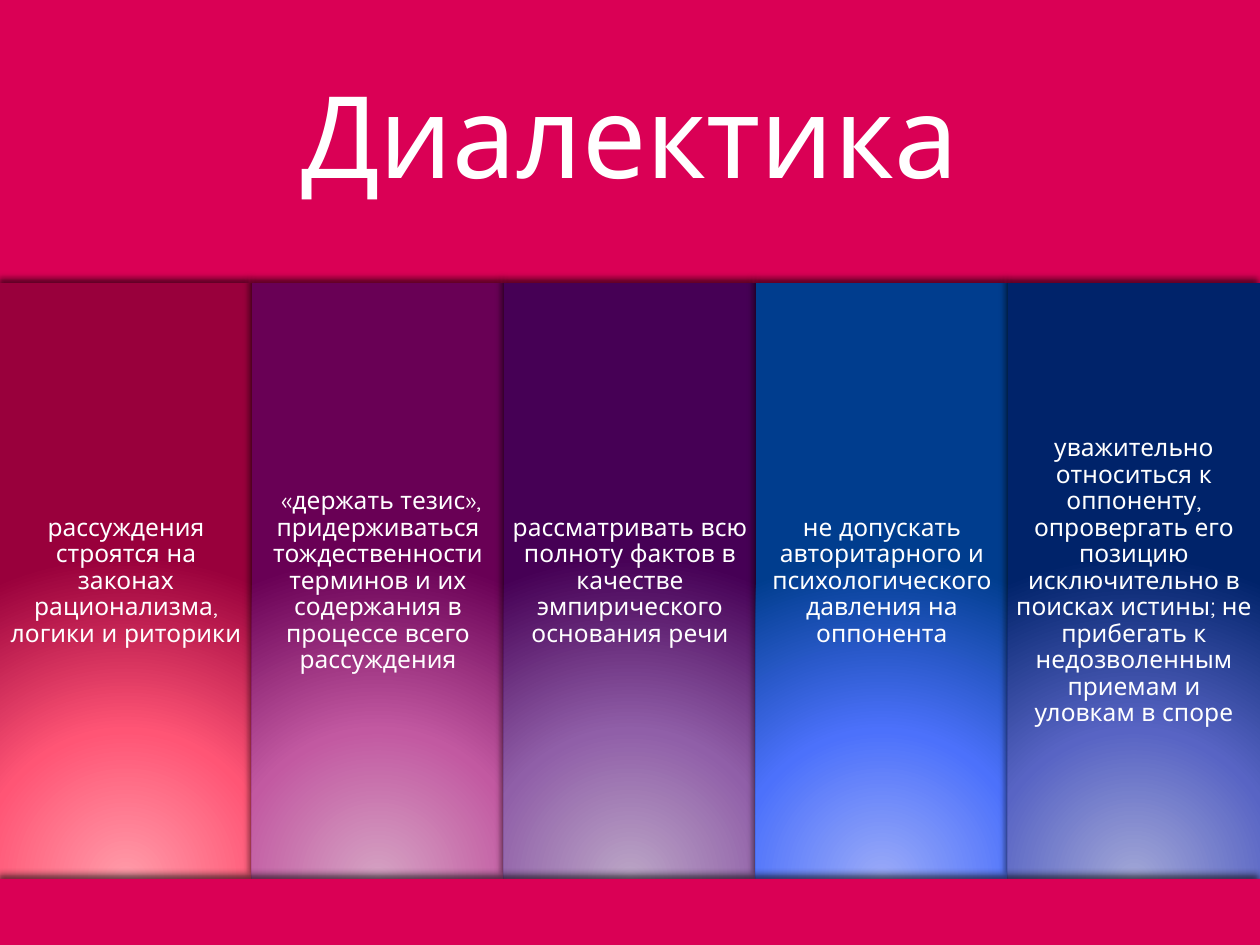
from dataclasses import dataclass

from lxml import etree
from pptx import Presentation
from pptx import util as u
from pptx.dml.color import RGBColor
from pptx.enum import shapes, text
from pptx.oxml import parse_xml
from pptx.oxml.ns import nsdecls, qn
from pptx.shapes.autoshape import Shape
from pptx.slide import Slide


@dataclass(frozen=True)
class Theme:
    font: str = "Quicksand"
    band: str = "DA0055"
    ink: str = "FFFFFF"
    shadow: str = "000000"
    title_size: float = 65
    body_size: float = 14
    title_inset: float = 0.27
    body_inset: float = 0.06


@dataclass(frozen=True)
class Rule:
    wording: str
    glow: str
    middle: str
    edge: str


@dataclass(frozen=True)
class Area:
    left: float
    top: float
    width: float
    height: float

    def emu(self) -> list[u.Emu]:
        return [
            u.Inches(self.left * WIDTH),
            u.Inches(self.top * HEIGHT),
            u.Inches(self.width * WIDTH),
            u.Inches(self.height * HEIGHT),
        ]


THEME = Theme()
WIDTH, HEIGHT = 10, 7.5
HEADER, BODY, FOOTER = 0.3, 0.63, 0.07

RULES = [
    Rule("рассуждения строятся на законах рационализма, логики и риторики",
         "FF9BA9", "FF5575", "99003C"),
    Rule(" «держать тезис», придерживаться тождественности терминов и их "
         "содержания в процессе всего рассуждения",
         "D5A2C3", "C259A1", "690055"),
    Rule("рассматривать всю полноту фактов в качестве эмпирического основания речи",
         "BBA5C6", "905FA8", "460055"),
    Rule("не допускать авторитарного и психологического давления на оппонента",
         "9AAAF8", "4C71FB", "003D8E"),
    Rule("уважительно относиться к оппоненту, опровергать его позицию "
         "исключительно в поисках истины; не прибегать к недозволенным "
         "приемам и уловкам в споре",
         "A1A6D6", "5864C4", "00236A"),
]


def cast_shadow(panel: Shape) -> None:
    panel.shadow.inherit = False
    effects = panel.element.spPr.find(qn("a:effectLst"))
    shadow = etree.SubElement(
        effects, qn("a:outerShdw"), blurRad=str(u.Pt(4)), dist=str(u.Pt(3)),
        dir=str(245 * 60000), algn="t", rotWithShape="0")
    color = etree.SubElement(shadow, qn("a:srgbClr"), val=THEME.shadow)
    etree.SubElement(color, qn("a:alpha"), val="60000")


def paint_band(panel: Shape) -> None:
    panel.fill.solid()
    panel.fill.fore_color.rgb = RGBColor.from_string(THEME.band)
    panel.line.fill.background()
    cast_shadow(panel)


def paint_glow(panel: Shape, rule: Rule) -> None:
    panel.fill.gradient()
    panel.line.fill.background()
    stops = "".join(
        f'<a:gs pos="{share * 1000}"><a:srgbClr val="{color}"/></a:gs>'
        for share, color in ((0, rule.glow), (46, rule.middle), (100, rule.edge)))
    gradient = parse_xml(
        f'<a:gradFill {nsdecls("a")} rotWithShape="1"><a:gsLst>{stops}</a:gsLst>'
        '<a:path path="circle"><a:fillToRect l="50000" t="155000" r="50000" '
        'b="-55000"/></a:path></a:gradFill>')
    properties = panel.element.spPr
    properties.replace(properties.find(qn("a:gradFill")), gradient)
    cast_shadow(panel)


def write(panel: Shape, wording: str, size: float, inset: float) -> None:
    frame = panel.text_frame
    frame.text = wording
    frame.word_wrap = True
    frame.auto_size = text.MSO_AUTO_SIZE.NONE
    frame.vertical_anchor = text.MSO_ANCHOR.MIDDLE
    frame.margin_left = frame.margin_right = u.Inches(inset)
    frame.margin_top = frame.margin_bottom = u.Inches(inset)
    paragraph = frame.paragraphs[0]
    paragraph.alignment = text.PP_ALIGN.CENTER
    paragraph.line_spacing = 0.9
    font = paragraph.runs[0].font
    font.name = THEME.font
    font.size = u.Pt(size)
    font.color.rgb = RGBColor.from_string(THEME.ink)


def add_panel(slide: Slide, area: Area) -> Shape:
    return slide.shapes.add_shape(shapes.MSO_SHAPE.RECTANGLE, *area.emu())


def add_header(slide: Slide, wording: str) -> None:
    header = slide.shapes.title
    header.left, header.top, header.width, header.height = Area(0, 0, 1, HEADER).emu()
    paint_band(header)
    write(header, wording, THEME.title_size, THEME.title_inset)


def add_rules(slide: Slide, rules: list[Rule]) -> None:
    share = 1 / len(rules)
    for index, rule in enumerate(rules):
        column = add_panel(slide, Area(index * share, HEADER, share, BODY))
        paint_glow(column, rule)
        write(column, rule.wording, THEME.body_size, THEME.body_inset)


def main() -> None:
    deck = Presentation()
    deck.slide_width, deck.slide_height = u.Inches(WIDTH), u.Inches(HEIGHT)
    slide = deck.slides.add_slide(deck.slide_layouts.get_by_name("Title Only"))
    background = slide.background.fill
    background.solid()
    background.fore_color.rgb = RGBColor.from_string(THEME.band)
    add_header(slide, "Диалектика")
    add_rules(slide, RULES)
    paint_band(add_panel(slide, Area(0, HEADER + BODY, 1, FOOTER)))
    deck.save("out.pptx")


if __name__ == "__main__":
    main()
